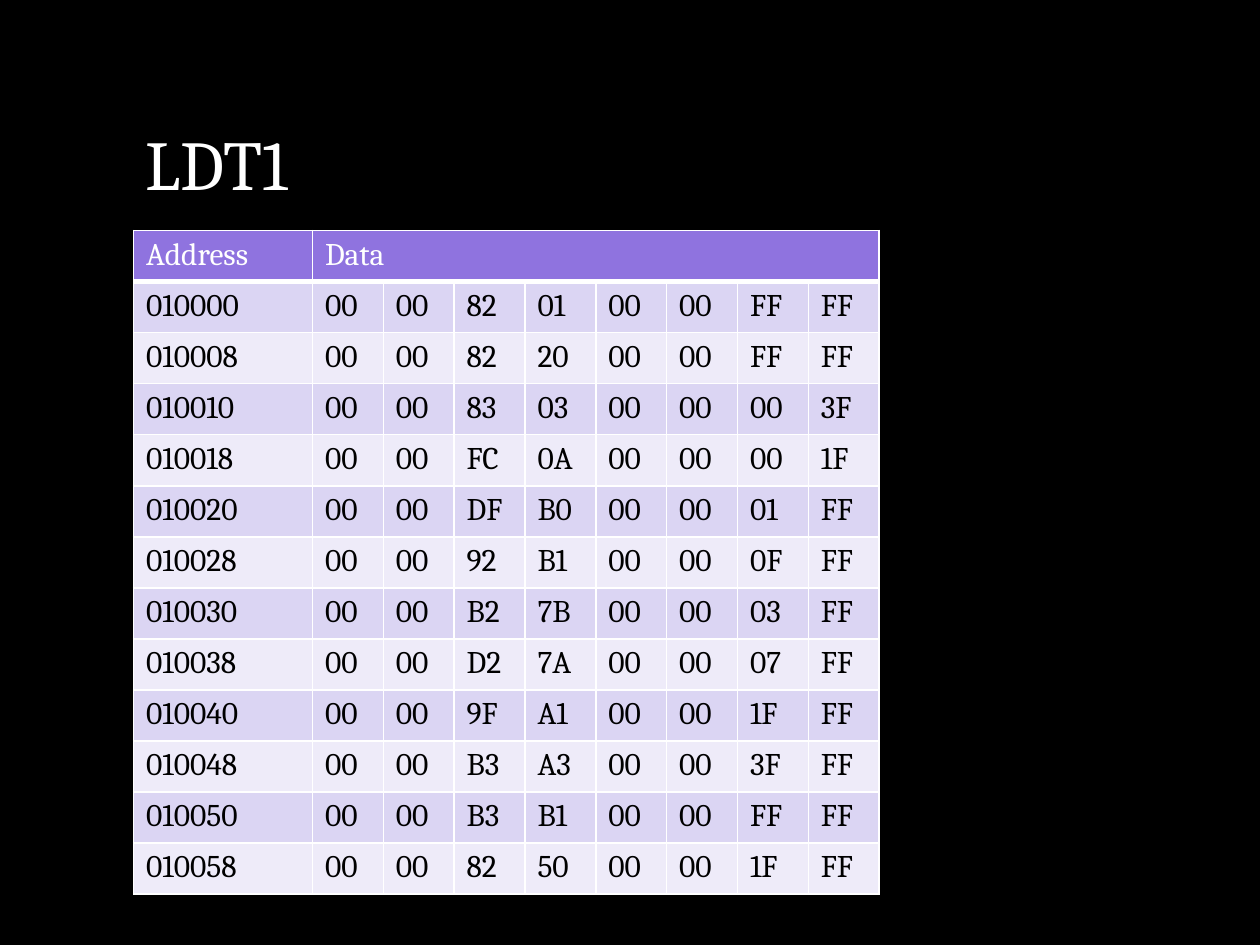
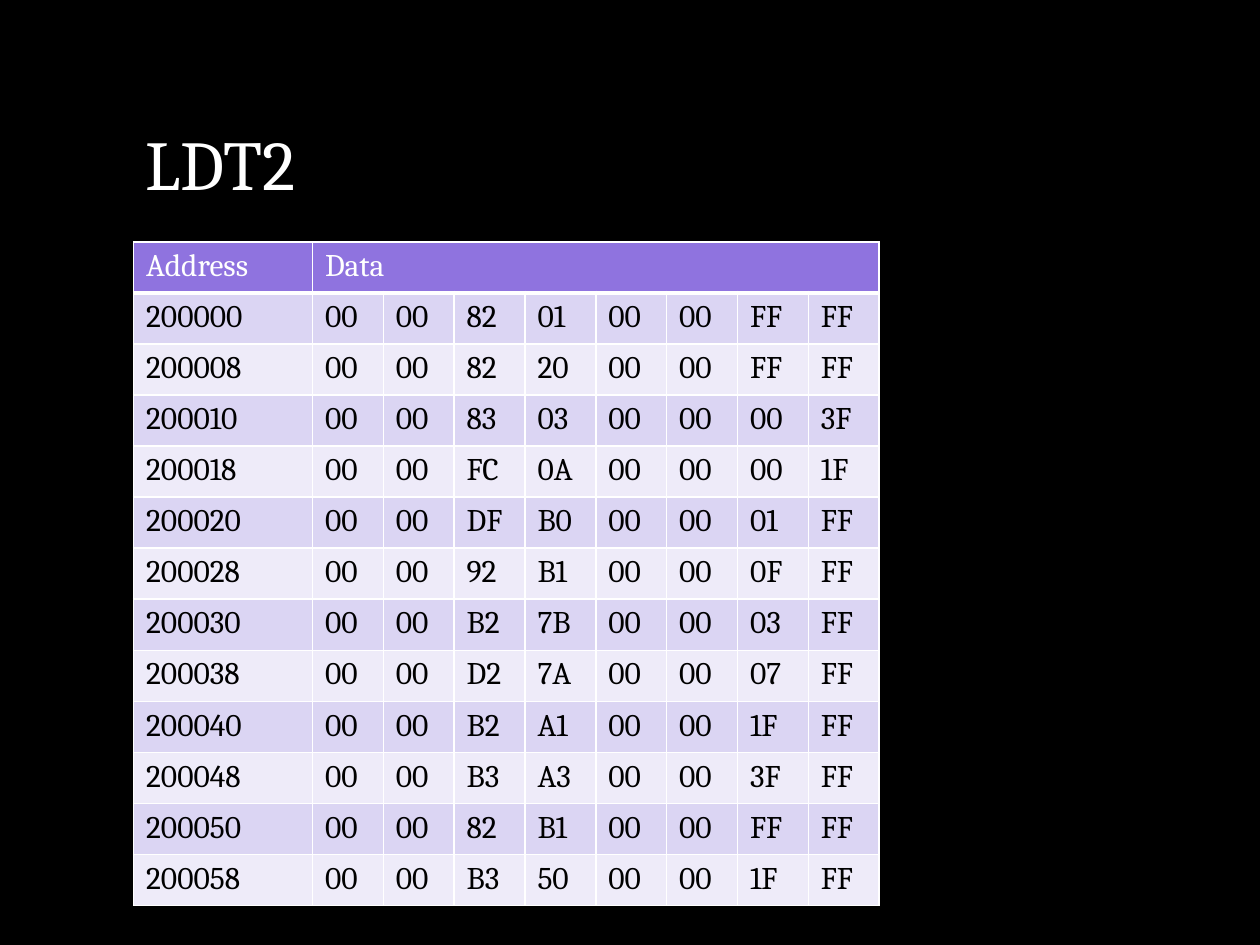
import dataclasses

import lxml.etree
import pptx
import pptx.dml.color
import pptx.enum.text
import pptx.oxml.ns
import pptx.util

Inches = pptx.util.Inches
Pt = pptx.util.Pt
rgb = pptx.dml.color.RGBColor.from_string


@dataclasses.dataclass(frozen=True)
class Theme:
    font: str = "Cambria"
    title_size: int = 40
    cell_size: int = 18
    background: str = "000000"
    light_text: str = "FFFFFF"
    dark_text: str = "000000"
    header_fill: str = "8F73DF"
    band_fills: tuple = ("DBD5F3", "EEEBF9")
    border: str = "FFFFFF"
    border_width: int = 1
    header_rule_width: int = 3


THEME = Theme()


def style_text(text_frame, size, color):
    for run in text_frame.paragraphs[0].runs:
        run.font.name = THEME.font
        run.font.size = Pt(size)
        run.font.bold = False
        run.font.color.rgb = rgb(color)


def style_cell(cell, fill, color, bottom_width):
    """Set a cell's fill, text format and four borders."""
    cell.fill.solid()
    cell.fill.fore_color.rgb = rgb(fill)
    style_text(cell.text_frame, THEME.cell_size, color)
    properties = cell._tc.get_or_add_tcPr()
    widths = {"lnL": THEME.border_width, "lnR": THEME.border_width,
              "lnT": THEME.border_width, "lnB": bottom_width}
    # Schema order puts the borders ahead of the fill.
    for position, (side, width) in enumerate(widths.items()):
        line = lxml.etree.Element(pptx.oxml.ns.qn(f"a:{side}"), w=str(Pt(width)))
        solid = lxml.etree.SubElement(line, pptx.oxml.ns.qn("a:solidFill"))
        lxml.etree.SubElement(solid, pptx.oxml.ns.qn("a:srgbClr"), val=THEME.border)
        properties.insert(position, line)


# Bytes that both descriptor tables share, one entry per descriptor
base_bytes = "01 20 03 0A B0 B1 7B 7A A1 A3 B1 50".split()
limits = ["FF FF", "FF FF", "00 3F", "00 1F", "01 FF", "0F FF",
          "03 FF", "07 FF", "1F FF", "3F FF", "FF FF", "1F FF"]

# Title, first address, top of the table, access byte of each descriptor
descriptor_tables = [
    ("LDT1", 0x010000, 1.83, "82 82 83 FC DF 92 B2 D2 9F B3 B3 82"),
    ("LDT2", 0x200000, 1.92, "82 82 83 FC DF 92 B2 D2 B2 B3 82 B3"),
]
descriptor_size = 8
left, table_width, table_height = 1.06, 5.92, 5.27
address_width = 1.42
byte_width = (table_width - address_width) / descriptor_size

deck = pptx.Presentation()
deck.slide_width, deck.slide_height = Inches(10), Inches(7.5)

for name, first_address, top, access_bytes in descriptor_tables:
    slide = deck.slides.add_slide(deck.slide_layouts[6])
    slide.background.fill.solid()
    slide.background.fill.fore_color.rgb = rgb(THEME.background)

    title = slide.shapes.add_textbox(
        Inches(left), Inches(0.42), Inches(7.88), Inches(1.25)).text_frame
    title.word_wrap = True
    title.vertical_anchor = pptx.enum.text.MSO_ANCHOR.BOTTOM
    title.text = name
    title.paragraphs[0].line_spacing = 0.8
    style_text(title, THEME.title_size, THEME.light_text)

    memory = slide.shapes.add_table(
        len(limits) + 1, descriptor_size + 1, Inches(left), Inches(top),
        Inches(table_width), Inches(table_height)).table
    for index, column in enumerate(memory.columns):
        column.width = Inches(byte_width if index else address_width)

    memory.cell(0, 0).text = "Address"
    memory.cell(0, 1).text = "Data"
    memory.cell(0, 1).merge(memory.cell(0, descriptor_size))
    for column in range(descriptor_size + 1):
        style_cell(memory.cell(0, column), THEME.header_fill, THEME.light_text,
                   THEME.header_rule_width)

    descriptors = zip(access_bytes.split(), base_bytes, limits)
    for index, (access, base, limit) in enumerate(descriptors):
        address = f"{first_address + index * descriptor_size:06X}"
        values = f"{address} 00 00 {access} {base} 00 00 {limit}".split()
        for column, value in enumerate(values):
            cell = memory.cell(index + 1, column)
            cell.text = value
            style_cell(cell, THEME.band_fills[index % 2], THEME.dark_text,
                       THEME.border_width)

deck.save("out.pptx")
